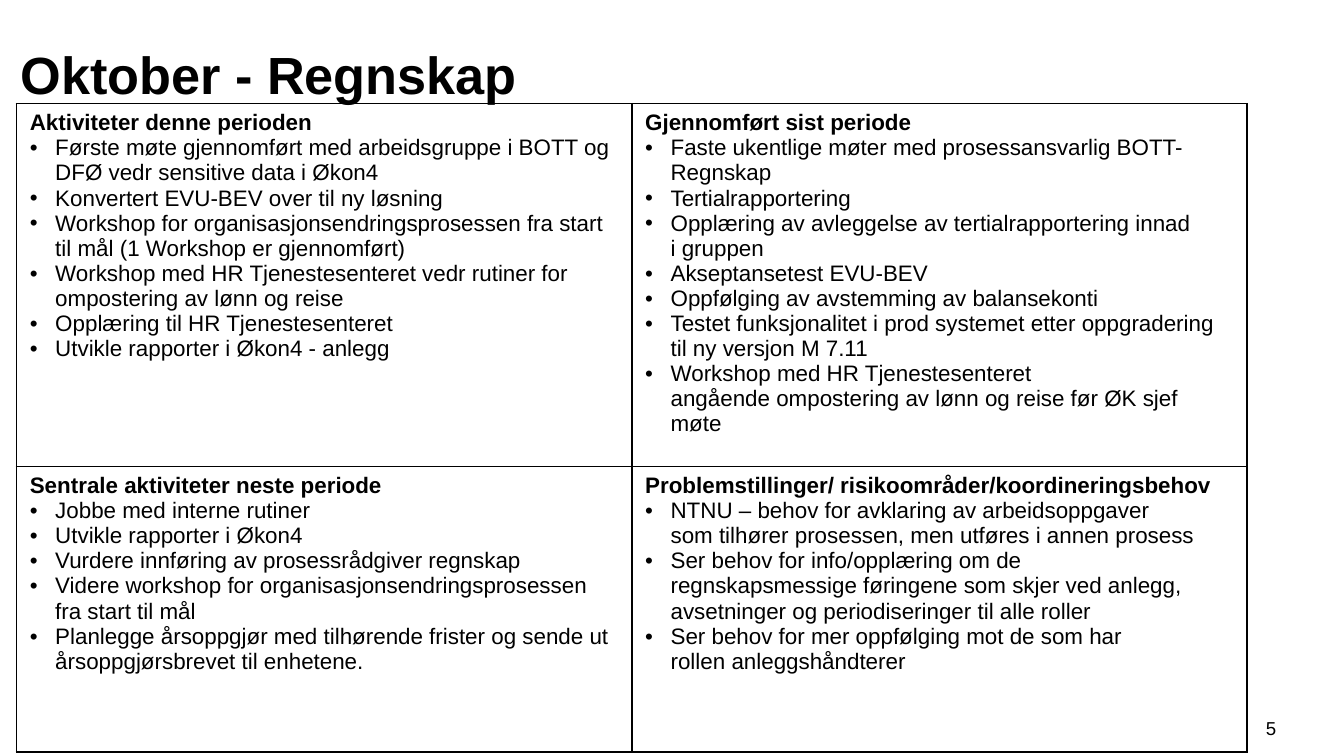
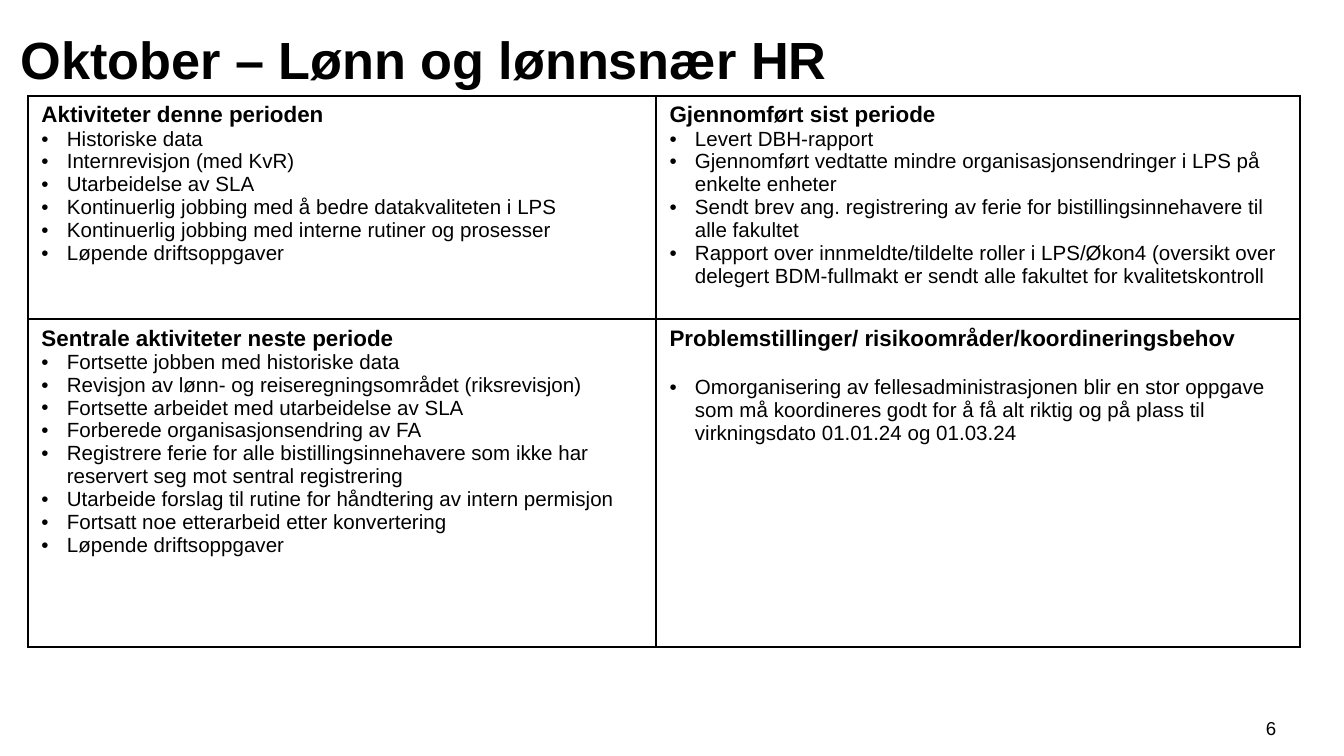
from lxml import etree
from pptx import Presentation
from pptx import util as u
from pptx.dml import color
from pptx.enum import text
from pptx.oxml import ns

FONT = "Arial"
COLORS = {"ink": "000000", "paper": "FFFFFF"}
INDENT = u.Cm(0.48)
HEADS = [
    "Aktiviteter denne perioden",
    "Gjennomført sist periode",
    "Sentrale aktiviteter neste periode",
    "Problemstillinger/ risikoområder/koordineringsbehov",
]

LEDGER = [
    [
        "Første møte gjennomført med arbeidsgruppe i BOTT og DFØ vedr sensitive data i Økon4",
        "Konvertert~EVU-BEV over til ny løsning",
        "Workshop for organisasjonsendringsprosessen fra start til~mål (1 Workshop er gjennomført)",
        "Workshop med HR Tjenestesenteret vedr rutiner for ompostering av lønn og reise",
        "Opplæring til HR Tjenestesenteret",
        "Utvikle rapporter i Økon4 - anlegg",
    ],
    [
        "Faste ukentlige møter med prosessansvarlig BOTT-Regnskap",
        "Tertialrapportering",
        "Opplæring av avleggelse av tertialrapportering innad i~gruppen",
        "Akseptansetest EVU-BEV",
        "Oppfølging av avstemming av balansekonti",
        "Testet funksjonalitet i~prod~systemet etter oppgradering til~ny versjon M 7.11",
        "Workshop med HR Tjenestesenteret angående~ompostering av lønn og reise før ØK sjef møte",
    ],
    [
        "Jobbe med interne rutiner",
        "Utvikle rapporter i Økon4",
        "Vurdere innføring av prosessrådgiver regnskap",
        "Videre workshop for organisasjonsendringsprosessen fra start til~mål",
        "Planlegge årsoppgjør med tilhørende frister og sende ut årsoppgjørsbrevet til enhetene.",
    ],
    [
        "NTNU – behov for avklaring av arbeidsoppgaver som~tilhører prosessen, men utføres i annen prosess",
        "Ser behov for info/opplæring om de regnskapsmessige~føringene som skjer ved anlegg, "
        "avsetninger og~periodiseringer til alle roller",
        "Ser behov for mer oppfølging mot de som har rollen~anleggshåndterer",
    ],
]

PAYROLL = [
    [
        "Historiske data",
        "Internrevisjon (med KvR)",
        "Utarbeidelse av SLA",
        "Kontinuerlig jobbing med å bedre datakvaliteten i LPS",
        "Kontinuerlig jobbing med interne rutiner og prosesser",
        "Løpende driftsoppgaver",
    ],
    [
        "Levert DBH-rapport",
        "Gjennomført vedtatte mindre organisasjonsendringer i LPS på enkelte enheter",
        "Sendt brev ang. registrering av ferie for bistillingsinnehavere til alle fakultet",
        "Rapport over innmeldte/tildelte roller i LPS/Økon4 (oversikt over "
        "delegert BDM-fullmakt er sendt alle fakultet for kvalitetskontroll",
    ],
    [
        "Fortsette jobben med historiske data",
        "Revisjon av lønn- og reiseregningsområdet (riksrevisjon)",
        "Fortsette arbeidet med utarbeidelse av SLA",
        "Forberede organisasjonsendring av FA",
        "Registrere ferie for alle bistillingsinnehavere som ikke har reservert seg mot sentral registrering",
        "Utarbeide forslag til rutine for håndtering av intern permisjon",
        "Fortsatt noe etterarbeid etter konvertering",
        "Løpende driftsoppgaver",
    ],
    [
        "Omorganisering av fellesadministrasjonen blir en stor oppgave som må koordineres godt "
        "for å få alt riktig og på plass til virkningsdato 01.01.24 og 01.03.24",
    ],
]


def add_run(para, words, size, bold=False):
    run = para.add_run()
    run.text = words.replace("~", chr(160))
    font = run.font
    font.name = FONT
    font.size = u.Pt(size)
    font.bold = bold
    font.color.rgb = color.RGBColor.from_string(COLORS["ink"])


def add_text(slide, box, words, size, bold, align, anchor):
    frame = slide.shapes.add_textbox(*map(u.Cm, box)).text_frame
    frame.word_wrap = True
    frame.vertical_anchor = anchor
    frame.margin_left = frame.margin_right = u.Cm(0.19)
    frame.margin_top = frame.margin_bottom = u.Cm(0.1)
    para = frame.paragraphs[0]
    para.alignment = align
    add_run(para, words, size, bold)


def add_title(slide, words, height):
    add_text(slide, (0.2, 0.36, 23.29, height), words, 28, True,
             text.PP_ALIGN.LEFT, text.MSO_ANCHOR.BOTTOM)


def add_number(slide, number):
    add_text(slide, (23.55, 13.39, 0.94, 0.76), str(number), 10, False,
             text.PP_ALIGN.CENTER, text.MSO_ANCHOR.MIDDLE)


def add_bullet(para):
    props = para._p.get_or_add_pPr()
    props.set("marL", str(INDENT))
    props.set("indent", str(-INDENT))
    etree.SubElement(props, ns.qn("a:buFont"), typeface=FONT)
    etree.SubElement(props, ns.qn("a:buChar"), char="•")


def add_border(cell):
    props = cell._tc.get_or_add_tcPr()
    for side in "LRTB":
        line = etree.SubElement(props, ns.qn("a:ln" + side), w=str(u.Pt(1)))
        fill = etree.SubElement(line, ns.qn("a:solidFill"))
        etree.SubElement(fill, ns.qn("a:srgbClr"), val=COLORS["ink"])


def fill_cell(cell, head, items, size, gap):
    add_border(cell)
    cell.fill.background()
    frame = cell.text_frame
    add_run(frame.paragraphs[0], head, 12, True)
    for i, item in enumerate(items):
        para = frame.add_paragraph()
        add_bullet(para)
        if gap and i == 0:
            para.space_before = u.Pt(gap)
        add_run(para, item, size)


def add_grid(slide, left, top, cols, rows, lists, size, gap=0):
    box = map(u.Cm, (left, top, sum(cols), sum(rows)))
    table = slide.shapes.add_table(len(rows), len(cols), *box).table
    table.first_row = table.horz_banding = False
    for col, width in zip(table.columns, cols):
        col.width = u.Cm(width)
    for row, height in zip(table.rows, rows):
        row.height = u.Cm(height)
    for i, (head, items) in enumerate(zip(HEADS, lists)):
        last = i == len(HEADS) - 1
        fill_cell(table.cell(*divmod(i, len(cols))), head, items, size, gap if last else 0)


def add_page(deck, number, title, height):
    slide = deck.slides.add_slide(deck.slide_layouts[6])
    fill = slide.background.fill
    fill.solid()
    fill.fore_color.rgb = color.RGBColor.from_string(COLORS["paper"])
    add_number(slide, number)
    add_title(slide, title, height)
    return slide


def main():
    deck = Presentation()
    deck.slide_width, deck.slide_height = u.Cm(25.4), u.Cm(14.29)

    slide = add_page(deck, 5, "Oktober - Regnskap", 1.73)
    add_grid(slide, 0.31, 1.96, (11.63, 11.63), (6.41, 5.39), LEDGER, 12)

    slide = add_page(deck, 6, "Oktober – Lønn og lønnsnær HR", 1.45)
    add_grid(slide, 0.53, 1.81, (11.87, 12.17), (4.22, 6.2), PAYROLL, 11, 13.4)

    deck.save("out.pptx")


if __name__ == "__main__":
    main()
